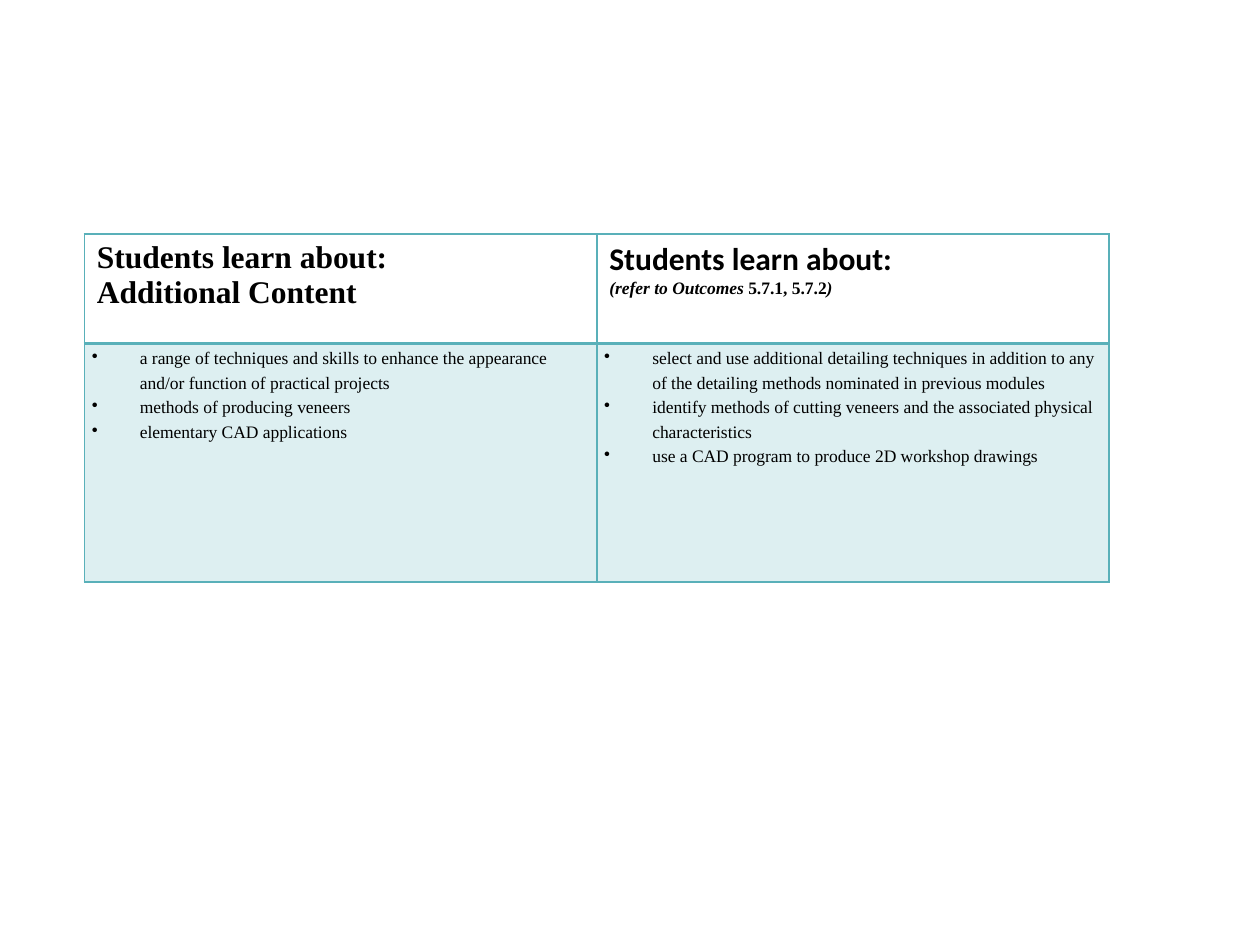
import lxml.etree
import pptx
import pptx.dml.color
import pptx.oxml.ns
import pptx.util

Cm = pptx.util.Cm
Pt = pptx.util.Pt
TEAL = "59B0B9"
BLACK = "000000"
SERIF = "Times New Roman"

HEADINGS = [
    [(SERIF, 18, [("Students learn about:", False)]),
     (SERIF, 18, [("Additional Content", False)])],
    [("Calibri", 18, [("Students learn about:", False)]),
     (SERIF, 10, [("(refer to Outcomes ", True), ("5.7.1, 5.7.2", False), (")", True)])],
]
TOPICS = [
    ["a range of techniques and skills to enhance the appearance and/or function of practical projects",
     "methods of producing veneers",
     "elementary CAD applications"],
    ["select and use additional detailing techniques in addition to any of the detailing methods "
     "nominated in previous modules",
     "identify methods of cutting veneers and the associated physical characteristics",
     "use a CAD program to produce 2D workshop drawings"],
]


def color(hex_value):
    return pptx.dml.color.RGBColor.from_string(hex_value)


def add_xml(parent, tag, **attributes):
    values = {key: str(value) for key, value in attributes.items()}
    return lxml.etree.SubElement(parent, pptx.oxml.ns.qn(tag), values)


def set_borders(cell, widths):
    properties = cell._tc.get_or_add_tcPr()
    for position, (side, width) in enumerate(zip("LRTB", widths)):
        border = add_xml(properties, f"a:ln{side}", w=Pt(width))
        add_xml(add_xml(border, "a:solidFill"), "a:srgbClr", val=TEAL)
        properties.insert(position, border)


def tint(cell, percent):
    cell.fill.solid()
    cell.fill.fore_color.rgb = color(TEAL)
    shade = cell._tc.tcPr.find(".//" + pptx.oxml.ns.qn("a:srgbClr"))
    add_xml(shade, "a:alpha", val=percent * 1000)


def set_font(paragraph, name, size, bold):
    paragraph.font.name = name
    paragraph.font.size = Pt(size)
    paragraph.font.bold = bold
    paragraph.font.color.rgb = color(BLACK)


def add_paragraphs(cell, count):
    frame = cell.text_frame
    return [frame.paragraphs[0]] + [frame.add_paragraph() for _ in range(count - 1)]


def fill_heading(cell, lines):
    cell.fill.background()
    set_borders(cell, (1, 1, 1, 2))
    for paragraph, (name, size, phrases) in zip(add_paragraphs(cell, len(lines)), lines):
        for text, italic in phrases:
            run = paragraph.add_run()
            run.text = text
            if italic:
                run.font.italic = True
        set_font(paragraph, name, size, True)


def fill_topics(cell, topics):
    tint(cell, 20)
    set_borders(cell, (1, 1, 2, 1))
    cell.margin_left = cell.margin_right = Cm(0.15)
    cell.margin_top = cell.margin_bottom = 0
    for paragraph, topic in zip(add_paragraphs(cell, len(topics)), topics):
        paragraph.text = topic
        paragraph.line_spacing = Pt(14)
        properties = paragraph._p.get_or_add_pPr()
        properties.set("marL", str(Cm(0.97)))
        properties.set("indent", str(-Cm(0.97)))
        add_xml(properties, "a:buChar", char="•")
        add_xml(add_xml(properties, "a:tabLst"), "a:tab", pos=Cm(0.64), algn="l")
        set_font(paragraph, SERIF, 10, False)


def add_syllabus(slide):
    column_width = Cm(10.33)
    row_heights = [Cm(2.21), Cm(4.8)]
    syllabus = slide.shapes.add_table(
        2, 2, Cm(1.7), Cm(4.72), 2 * column_width, sum(row_heights)).table
    syllabus.first_row = False
    syllabus.horz_banding = False
    for row, height in zip(syllabus.rows, row_heights):
        row.height = height
    for index, (heading, topics) in enumerate(zip(HEADINGS, TOPICS)):
        syllabus.columns[index].width = column_width
        fill_heading(syllabus.cell(0, index), heading)
        fill_topics(syllabus.cell(1, index), topics)


def main():
    presentation = pptx.Presentation()
    presentation.slide_width = Cm(25.4)
    presentation.slide_height = Cm(19.05)
    add_syllabus(presentation.slides.add_slide(presentation.slide_layouts[6]))
    presentation.save("out.pptx")


if __name__ == "__main__":
    main()
